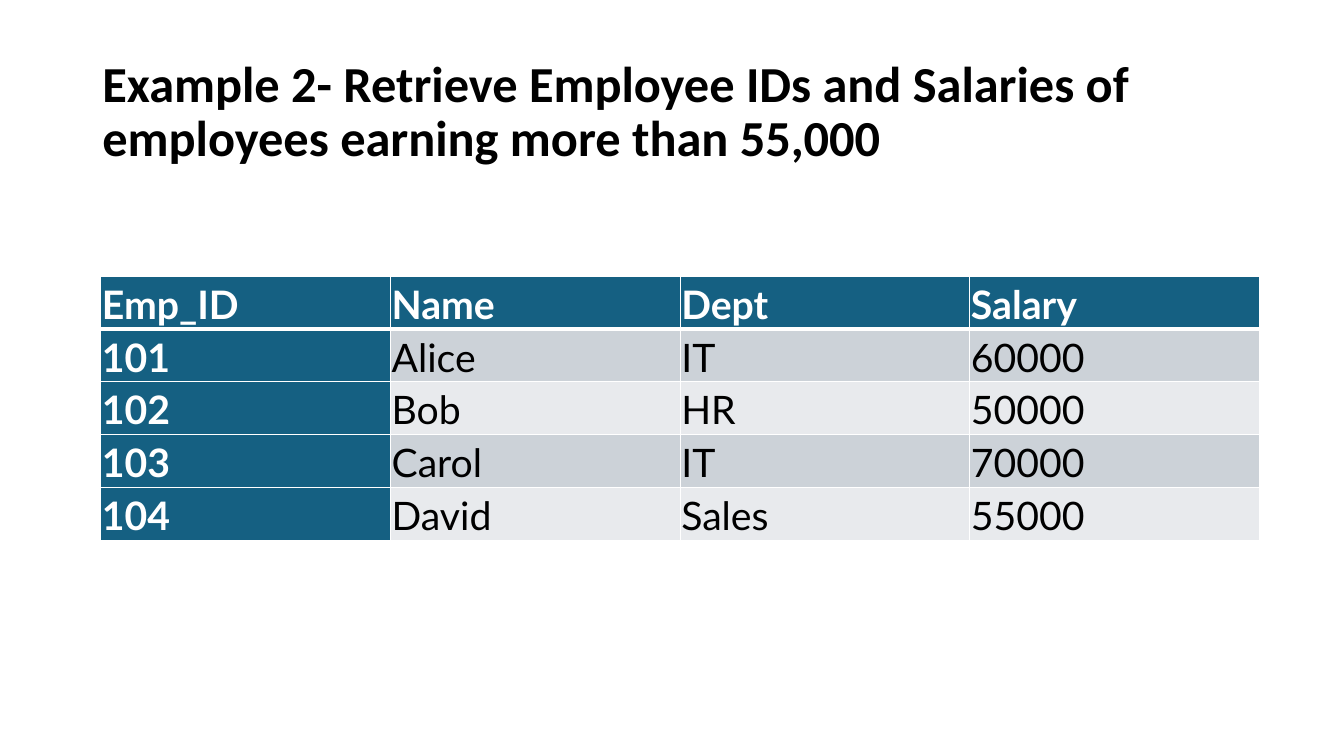
import dataclasses
from typing import Any

import pptx
import pptx.dml.color
import pptx.enum.text
import pptx.oxml
import pptx.oxml.ns
import pptx.util

Cm = pptx.util.Cm
Pt = pptx.util.Pt
MIDDLE = pptx.enum.text.MSO_ANCHOR.MIDDLE


@dataclasses.dataclass(frozen=True)
class Theme:
    ink: str = "000000"
    white: str = "FFFFFF"
    header: str = "156082"
    bands: tuple[str, str] = ("CCD2D8", "E8EAED")
    title_font: str = "Calibri"
    table_font: str = "Lato"
    title_size: float = 36
    table_size: float = 28
    border: float = 1
    header_border: float = 3


@dataclasses.dataclass(frozen=True)
class Employee:
    emp_id: str
    name: str
    dept: str
    salary: str


THEME = Theme()
TITLE = ("Example 2- Retrieve Employee IDs and Salaries of "
         "employees earning more than 55,000")
HEADINGS = ("Emp_ID", "Name", "Dept", "Salary")
EMPLOYEES = (
    Employee("101", "Alice", "IT", "60000"),
    Employee("102", "Bob", "HR", "50000"),
    Employee("103", "Carol", "IT", "70000"),
    Employee("104", "David", "Sales", "55000"),
)
COL_WIDTH, ROW_HEIGHT = Cm(7.3), Cm(1.31)


def set_format(target: Any, values: dict[str, Any]) -> None:
    for name, value in values.items():
        setattr(target, name, value)


def write(tf: Any, text: str, color: str, font: dict[str, Any],
          spacing: dict[str, Any]) -> None:
    p = tf.paragraphs[0]
    set_format(p, spacing)
    r = p.add_run()
    r.text = text
    set_format(r.font, font)
    r.font.color.rgb = pptx.dml.color.RGBColor.from_string(color)


def add_title(slide: Any) -> None:
    sp = slide.shapes.add_textbox(Cm(2.33), Cm(1.01), Cm(29.21), Cm(3.68))
    tf = sp.text_frame
    set_format(tf, {"word_wrap": True, "vertical_anchor": MIDDLE})
    write(tf, TITLE, THEME.ink,
          {"name": THEME.title_font, "size": Pt(THEME.title_size), "bold": True},
          {"line_spacing": 0.9})


def set_borders(cell: Any, widths: dict[str, float]) -> None:
    """Put the side lines ahead of the fill, as the schema orders them."""
    tcPr = cell._tc.get_or_add_tcPr()
    for i, (side, width) in enumerate(widths.items()):
        tcPr.insert(i, pptx.oxml.parse_xml(
            f'<a:ln{side} {pptx.oxml.ns.nsdecls("a")} w="{Pt(width)}">'
            f'<a:solidFill><a:srgbClr val="{THEME.white}"/></a:solidFill>'
            f'</a:ln{side}>'))


def fill_cell(cell: Any, text: str, row: int, col: int) -> None:
    strong = row == 0 or col == 0
    fill = THEME.header if strong else THEME.bands[(row - 1) % 2]
    inset = Cm(0.03)
    set_format(cell, {"vertical_anchor": MIDDLE, "margin_left": inset,
                      "margin_top": inset, "margin_right": inset,
                      "margin_bottom": inset})
    cell.fill.solid()
    cell.fill.fore_color.rgb = pptx.dml.color.RGBColor.from_string(fill)
    widths = dict.fromkeys("LRTB", THEME.border)
    if row == 0:
        widths["B"] = THEME.header_border
    elif row == 1:
        widths["T"] = THEME.header_border
    set_borders(cell, widths)
    write(cell.text_frame, text, THEME.white if strong else THEME.ink,
          {"name": THEME.table_font, "size": Pt(THEME.table_size), "bold": strong},
          {"line_spacing": 1.07, "space_after": Pt(8)})


def add_employee_table(slide: Any) -> None:
    rows = [HEADINGS, *map(dataclasses.astuple, EMPLOYEES)]
    table = slide.shapes.add_table(
        len(rows), len(HEADINGS), Cm(2.54), Cm(6.96),
        COL_WIDTH * len(HEADINGS), ROW_HEIGHT * len(rows)).table
    table.first_col = True
    for column in table.columns:
        column.width = COL_WIDTH
    for i, values in enumerate(rows):
        table.rows[i].height = ROW_HEIGHT
        for j, text in enumerate(values):
            fill_cell(table.cell(i, j), text, i, j)


def main() -> None:
    prs = pptx.Presentation()
    set_format(prs, {"slide_width": Cm(33.87), "slide_height": Cm(19.05)})
    slide = prs.slides.add_slide(prs.slide_layouts[6])
    add_title(slide)
    add_employee_table(slide)
    prs.save("out.pptx")


if __name__ == "__main__":
    main()
